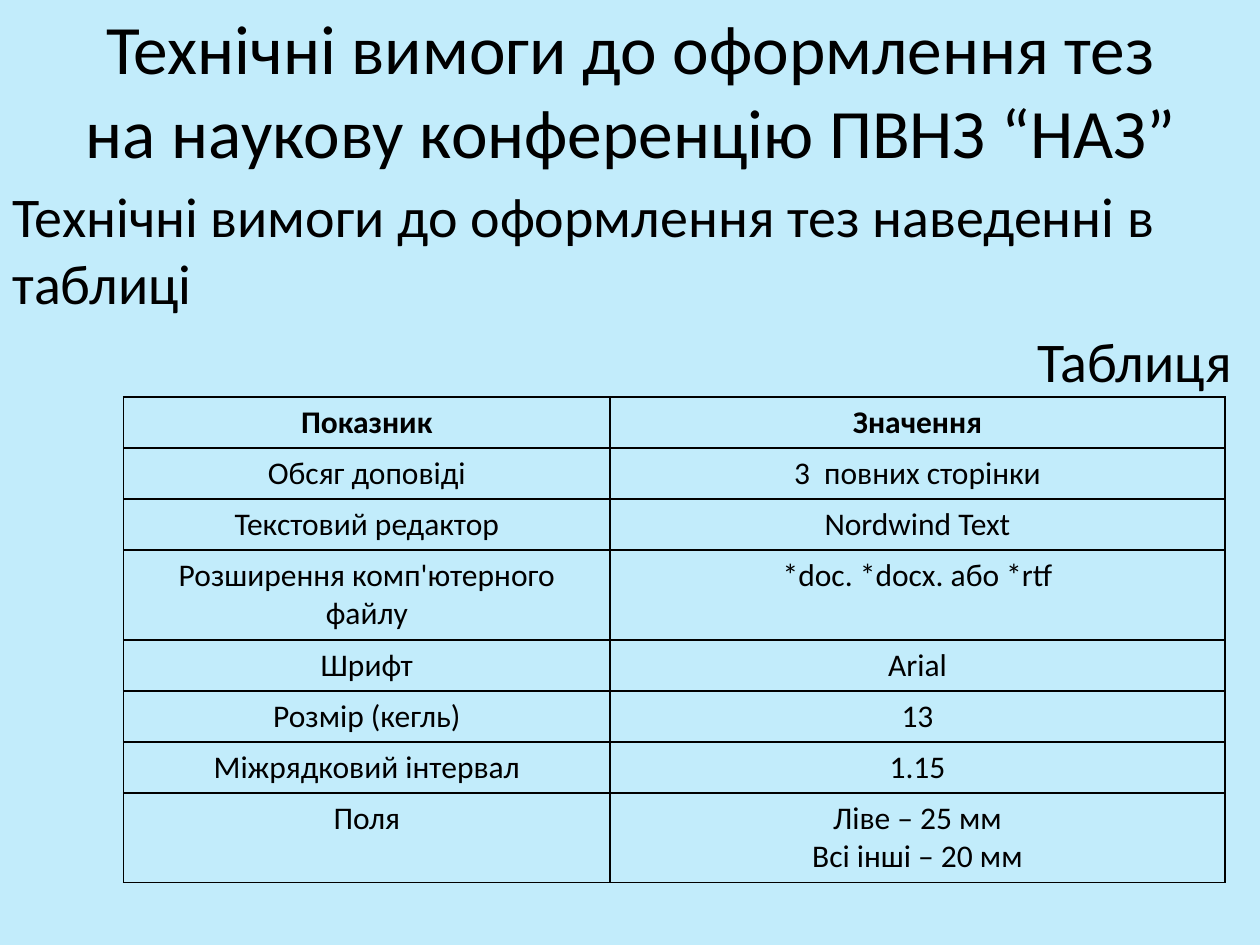
from lxml.etree import SubElement
from pptx import Presentation
from pptx.dml.color import RGBColor
from pptx.enum.text import MSO_ANCHOR, PP_ALIGN
from pptx.oxml.ns import qn
from pptx.util import Pt

COLORS = {"background": "C2ECFB", "ink": "000000"}
FONT = "Calibri"
BORDER_WIDTH = Pt(1)

TITLE = "Технічні вимоги до оформлення тез на наукову конференцію ПВНЗ “НАЗ”"
INTRO = "Технічні вимоги до оформлення тез наведенні в таблиці"
CAPTION = "Таблиця"
REQUIREMENTS = [
    ("Показник", "Значення"),
    ("Обсяг доповіді", "3  повних сторінки"),
    ("Текстовий редактор", "Nordwind Text"),
    ("Розширення комп'ютерного файлу", "*doc. *docx. або *rtf"),
    ("Шрифт", "Arial"),
    ("Розмір (кегль)", "13"),
    ("Міжрядковий інтервал", "1.15"),
    ("Поля", "Ліве – 25 мм\nВсі інші – 20 мм"),
]
COLUMN_WIDTHS = (278, 351.4)
ROW_HEIGHT = 29.2
TALL_ROW_HEIGHT = 51.2
TALL_ROWS = (3, 7)


def rgb(name):
    return RGBColor.from_string(COLORS[name])


def format_paragraph(paragraph, size, align, bold=False):
    paragraph.alignment = align
    for run in paragraph.runs:
        run.font.name = FONT
        run.font.size = Pt(size)
        run.font.bold = bold
        run.font.color.rgb = rgb("ink")


def add_text(slide, left, top, width, height, paragraphs, size,
             anchor=MSO_ANCHOR.TOP, space_before=0):
    """Add a wrapped text box from (text, alignment) pairs."""
    frame = slide.shapes.add_textbox(
        Pt(left), Pt(top), Pt(width), Pt(height)).text_frame
    frame.word_wrap = True
    frame.vertical_anchor = anchor
    frame.text = "\n".join(text for text, _ in paragraphs)
    for paragraph, (_, align) in zip(frame.paragraphs, paragraphs):
        paragraph.space_before = Pt(space_before)
        format_paragraph(paragraph, size, align)


def add_borders(cell):
    """Draw all four sides; the lines must precede the fill in tcPr."""
    properties = cell._tc.get_or_add_tcPr()
    for position, side in enumerate(("a:lnL", "a:lnR", "a:lnT", "a:lnB")):
        line = SubElement(properties, qn(side), w=str(BORDER_WIDTH))
        fill = SubElement(line, qn("a:solidFill"))
        SubElement(fill, qn("a:srgbClr"), val=COLORS["ink"])
        properties.insert(position, line)


def add_requirements_table(slide, left, top):
    heights = [TALL_ROW_HEIGHT if row in TALL_ROWS else ROW_HEIGHT
               for row in range(len(REQUIREMENTS))]
    table = slide.shapes.add_table(
        len(REQUIREMENTS), len(COLUMN_WIDTHS), Pt(left), Pt(top),
        Pt(sum(COLUMN_WIDTHS)), Pt(sum(heights))).table
    table.horz_banding = False
    for column, width in zip(table.columns, COLUMN_WIDTHS):
        column.width = Pt(width)
    for row_index, (height, values) in enumerate(zip(heights, REQUIREMENTS)):
        table.rows[row_index].height = Pt(height)
        for column_index, value in enumerate(values):
            cell = table.cell(row_index, column_index)
            cell.text_frame.text = value
            for paragraph in cell.text_frame.paragraphs:
                format_paragraph(paragraph, 18, PP_ALIGN.CENTER,
                                 bold=row_index == 0)
            cell.fill.background()
            add_borders(cell)


def main():
    presentation = Presentation()
    presentation.slide_width = Pt(720)
    presentation.slide_height = Pt(540)
    slide = presentation.slides.add_slide(presentation.slide_layouts[6])
    background = slide.background.fill
    background.solid()
    background.fore_color.rgb = rgb("background")

    add_text(slide, 36.5, 15, 648, 71.5, [(TITLE, PP_ALIGN.CENTER)], 39.6,
             anchor=MSO_ANCHOR.MIDDLE)
    add_text(slide, 0, 100, 711, 425.5,
             [(INTRO, PP_ALIGN.LEFT), (CAPTION, PP_ALIGN.RIGHT)], 32,
             space_before=6.4)
    add_requirements_table(slide, 70.6, 226.8)
    presentation.save("out.pptx")


if __name__ == "__main__":
    main()
